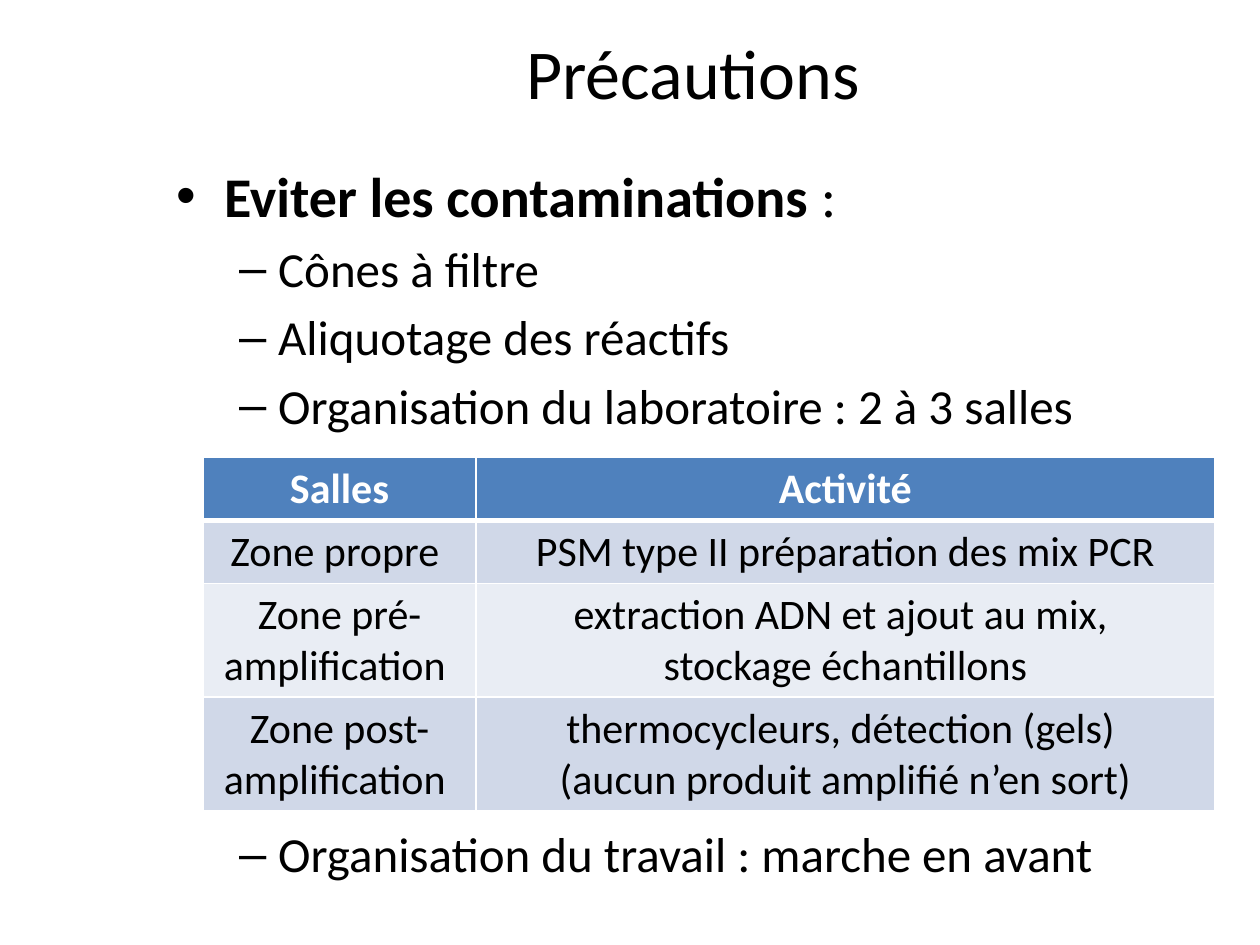
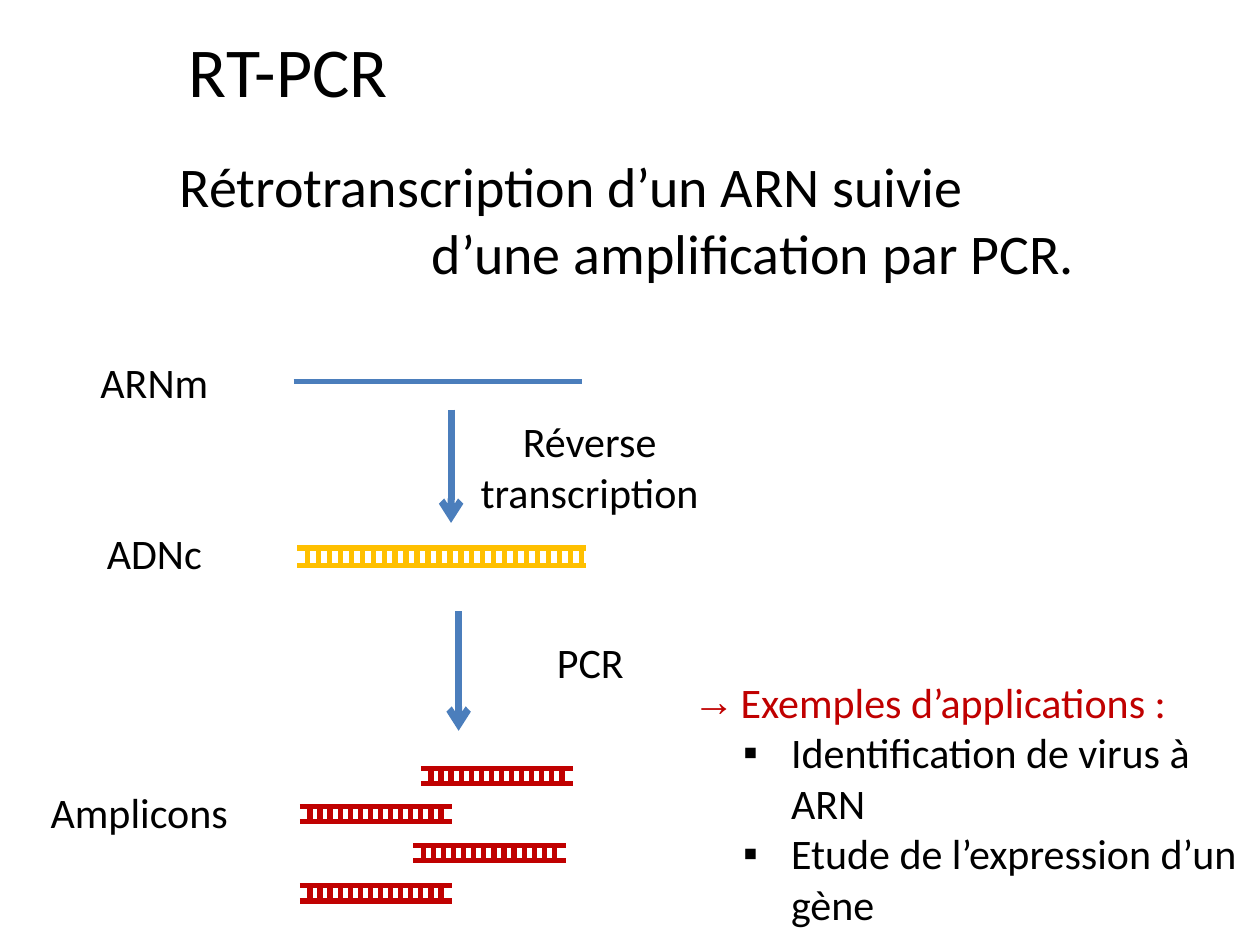
from dataclasses import dataclass

import pptx
import pptx.dml.color
import pptx.enum.shapes
import pptx.enum.text
import pptx.oxml
import pptx.oxml.ns
import pptx.util
from lxml import etree

Inches = pptx.util.Inches
Pt = pptx.util.Pt
RGBColor = pptx.dml.color.RGBColor
ALIGN = pptx.enum.text.PP_ALIGN
ANCHOR = pptx.enum.text.MSO_ANCHOR
STRAIGHT = pptx.enum.shapes.MSO_CONNECTOR.STRAIGHT
qn = pptx.oxml.ns.qn

FONT = "Calibri"
BLACK = RGBColor(0x00, 0x00, 0x00)
WHITE = RGBColor(0xFF, 0xFF, 0xFF)
BLUE = RGBColor(0x4B, 0x7E, 0xBC)
GOLD = RGBColor(0xFF, 0xC0, 0x00)
RED = RGBColor(0xC0, 0x00, 0x00)
HEADER_FILL = RGBColor(0x4F, 0x81, 0xBD)
ROW_FILLS = (RGBColor(0xD0, 0xD8, 0xE8), RGBColor(0xE9, 0xED, 0xF4))

RUNG_PITCH_START = 0.08


@dataclass(frozen=True)
class Box:
    left: float
    top: float
    width: float
    height: float

    def emu(self) -> tuple:
        return tuple(Inches(v) for v in (self.left, self.top, self.width, self.height))


@dataclass(frozen=True)
class Para:
    text: str
    size: int = 24
    color: RGBColor = BLACK
    bullet: str = ""
    margin: float = 0
    hanging: float = 0
    before: float = 0
    align: ALIGN = ALIGN.LEFT
    bold_lead: str = ""


@dataclass(frozen=True)
class Strand:
    left: float
    top: float
    length: float
    height: float
    rungs: int
    pitch: float
    color: RGBColor


@dataclass(frozen=True)
class Label:
    text: str
    box: Box


def format_run(r, size: int, color: RGBColor, bold: bool = False) -> None:
    r.font.name = FONT
    r.font.size = Pt(size)
    r.font.color.rgb = color
    r.font.bold = bold


def fill_paragraph(p, para: Para) -> None:
    pPr = p._p.get_or_add_pPr()
    pPr.set("marL", str(Inches(para.margin)))
    pPr.set("indent", str(-Inches(para.hanging)))
    if para.bullet:
        etree.SubElement(pPr, qn("a:buFont")).set("typeface", "Arial")
        etree.SubElement(pPr, qn("a:buChar")).set("char", para.bullet)
    p.alignment = para.align
    p.space_before = Pt(para.before)
    if para.bold_lead:
        r = p.add_run()
        r.text = para.bold_lead
        format_run(r, para.size, para.color, True)
    r = p.add_run()
    r.text = para.text
    format_run(r, para.size, para.color)


def add_text(s, box: Box, paras: list[Para], anchor: ANCHOR = ANCHOR.TOP) -> None:
    tf = s.shapes.add_textbox(*box.emu()).text_frame
    tf.word_wrap = True
    tf.vertical_anchor = anchor
    for i, para in enumerate(paras):
        fill_paragraph(tf.paragraphs[0] if i == 0 else tf.add_paragraph(), para)


def add_title(s, text: str, box: Box, align: ALIGN = ALIGN.LEFT) -> None:
    add_text(s, box, [Para(text, 40, align=align)], ANCHOR.MIDDLE)


def add_line(shapes, x1: float, y1: float, x2: float, y2: float,
             color: RGBColor, width: float = 3, arrow: bool = False) -> None:
    line = shapes.add_connector(STRAIGHT, Inches(x1), Inches(y1), Inches(x2), Inches(y2))
    line.line.color.rgb = color
    line.line.width = Pt(width)
    if arrow:
        etree.SubElement(line.line._get_or_add_ln(), qn("a:tailEnd")).set("type", "arrow")
    etree.SubElement(line._element.spPr, qn("a:effectLst"))


def add_strand(s, strand: Strand) -> None:
    shapes = s.shapes.add_group_shape().shapes
    bottom = strand.top + strand.height
    for y in (strand.top, bottom):
        add_line(shapes, strand.left, y, strand.left + strand.length, y, strand.color)
    for i in range(strand.rungs):
        x = strand.left + RUNG_PITCH_START + i * strand.pitch
        add_line(shapes, x, strand.top, x, bottom, strand.color)


def set_borders(cell, top: float, bottom: float) -> None:
    tcPr = cell._tc.get_or_add_tcPr()
    widths = {"a:lnL": 1, "a:lnR": 1, "a:lnT": top, "a:lnB": bottom}
    for i, (tag, width) in enumerate(widths.items()):
        ln = etree.Element(qn(tag))
        ln.set("w", str(Pt(width)))
        fill = etree.SubElement(ln, qn("a:solidFill"))
        etree.SubElement(fill, qn("a:srgbClr")).set("val", str(WHITE))
        tcPr.insert(i, ln)


def add_rooms_table(s, box: Box, widths: list[float], heights: list[float],
                    rows: list[tuple[str, str]]) -> None:
    table = s.shapes.add_table(len(rows), len(widths), *box.emu()).table
    for column, width in zip(table.columns, widths):
        column.width = Inches(width)
    for i, (row, height, texts) in enumerate(zip(table.rows, heights, rows)):
        row.height = Inches(height)
        for cell, text in zip(row.cells, texts):
            header = i == 0
            cell.fill.solid()
            cell.fill.fore_color.rgb = HEADER_FILL if header else ROW_FILLS[(i - 1) % 2]
            set_borders(cell, 3 if i == 1 else 1, 3 if header else 1)
            cell.text_frame.text = text
            for p in cell.text_frame.paragraphs:
                p.alignment = ALIGN.CENTER
                for r in p.runs:
                    format_run(r, 24, WHITE if header else BLACK, header)


def dash(text: str, before: float = 5.6) -> Para:
    return Para(text, 28, bullet="–", margin=0.81, hanging=0.31, before=before)


def build_precautions(s) -> None:
    add_title(s, "Précautions", Box(1, 0.13, 9, 0.87), ALIGN.CENTER)
    add_text(s, Box(1.3, 1.23, 8.5, 2.35), [
        Para(":", 32, bullet="•", margin=0.38, hanging=0.38,
             bold_lead="Eviter les contaminations "),
        dash("Cônes à filtre"),
        dash("Aliquotage des réactifs"),
        dash("Organisation du laboratoire : 2 à 3 salles"),
    ])
    add_rooms_table(s, Box(1.61, 3.63, 8.03, 2.8), [2.17, 5.86], [0.5, 0.5, 0.9, 0.9], [
        ("Salles", "Activité"),
        ("Zone propre ", "PSM type II préparation des mix PCR"),
        ("Zone pré-amplification ",
         "extraction ADN et ajout au mix, \nstockage échantillons"),
        ("Zone post-amplification ",
         "thermocycleurs, détection (gels) \n(aucun produit amplifié n’en sort)"),
    ])
    add_text(s, Box(1.3, 6.49, 8.5, 0.57),
             [dash("Organisation du travail : marche en avant", 0)])


def build_rt_pcr(s) -> None:
    add_title(s, "RT-PCR", Box(1.4, 0.13, 2.28, 0.84))
    add_text(s, Box(1.33, 1.15, 8.86, 1.21), [
        Para("Rétrotranscription d’un ARN suivie", 32),
        Para("d’une amplification par PCR.", 32, margin=2),
    ])

    add_line(s.shapes, 2.33, 3.03, 4.62, 3.03, BLUE)
    add_strand(s, Strand(2.36, 4.35, 2.29, 0.14, 26, 0.087, GOLD))
    for left, top in ((3.34, 6.1), (2.38, 6.4), (3.28, 6.71), (2.38, 7.03)):
        add_strand(s, Strand(left, top, 1.21, 0.12, 14, 0.08, RED))
    for x, start, end in ((3.58, 3.25, 4.15), (3.64, 4.85, 5.8)):
        add_line(s.shapes, x, start, x, end, BLUE, 4, True)

    for label in (
        Label("ARNm", Box(0.44, 2.78, 1.57, 0.5)),
        Label("ADNc", Box(0.44, 4.14, 1.57, 0.5)),
        Label("Amplicons", Box(0.17, 6.19, 1.87, 0.5)),
        Label("Réverse transcription", Box(3.68, 3.25, 2, 0.91)),
        Label("PCR", Box(4.01, 5, 1.35, 0.5)),
    ):
        add_text(s, label.box, [Para(label.text, align=ALIGN.CENTER)])

    examples = ("Identification de virus à ARN", "Etude de l’expression d’un gène")
    add_text(s, Box(5.4, 5.32, 4.64, 2.07), [
        Para("Exemples d’applications :", color=RED, bullet="→", margin=0.38, hanging=0.38),
        *(Para(text, bullet="▪", margin=0.78, hanging=0.38) for text in examples),
    ])


def main() -> None:
    prs = pptx.Presentation()
    prs.slide_width = Inches(10)
    prs.slide_height = Inches(7.5)
    for build in (build_precautions, build_rt_pcr):
        build(prs.slides.add_slide(prs.slide_layouts[6]))
    prs.save("out.pptx")


if __name__ == "__main__":
    main()
